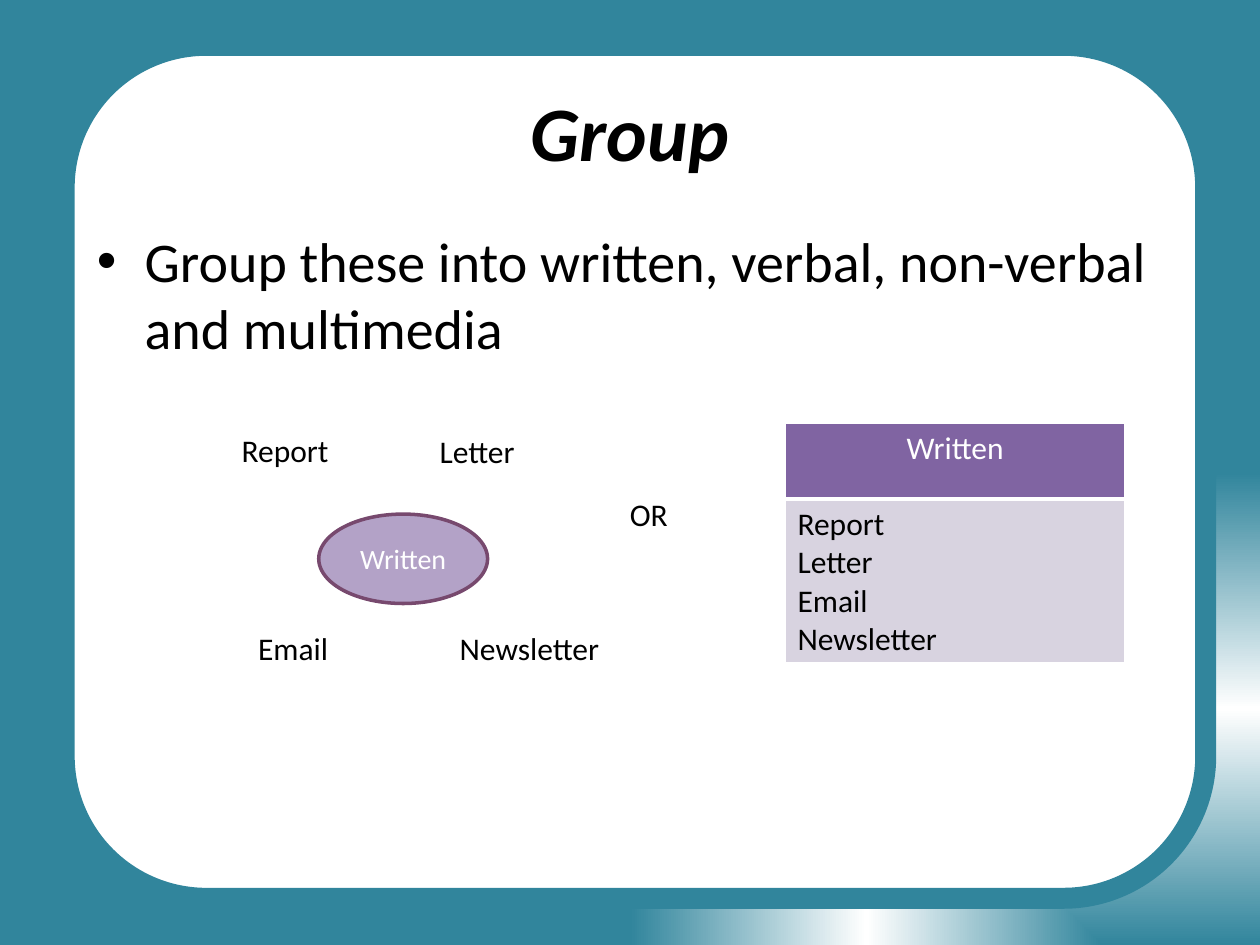
from lxml import etree
from pptx import Presentation
from pptx.dml.color import RGBColor
from pptx.enum.shapes import MSO_SHAPE as Shape
from pptx.enum.text import MSO_ANCHOR as Anchor, MSO_AUTO_SIZE as AutoSize, PP_ALIGN as Align
from pptx.oxml import parse_xml
from pptx.oxml.ns import nsdecls, qn
from pptx.util import Inches, Pt

COLORS = {
    "teal": "31859C", "white": "FFFFFF", "black": "000000", "lilac": "B3A2C7",
    "plum": "77496E", "purple": "8064A2", "pale": "D8D3E0",
}
FONT = "Calibri"
ITEMS = ["Report", "Letter", "Email", "Newsletter"]
ITEM_BOXES = [(1.82, 3.37, 0.96), (3.39, 3.38, 0.85), (1.95, 4.94, 0.83), (3.55, 4.94, 1.39)]


def rgb(name):
    """Return the named palette colour."""
    return RGBColor.from_string(COLORS[name])


def style_text(text_frame, size, color="black", align=Align.LEFT, bold=False, italic=False):
    """Format every paragraph and run of a text frame."""
    for paragraph in text_frame.paragraphs:
        paragraph.alignment = align
        for run in paragraph.runs:
            font = run.font
            font.name, font.size = FONT, Pt(size)
            font.bold, font.italic = bold, italic
            font.color.rgb = rgb(color)


def set_background(slide):
    """Fill the background with a gradient that starts at the lower right corner."""
    stops = [(0, "teal"), (50, "white"), (100, "teal")]
    slide.background.fill.solid()
    properties = slide.element.find(".//" + qn("p:bgPr"))
    stop_xml = "".join(
        f'<a:gs pos="{position * 1000}"><a:srgbClr val="{COLORS[color]}"/></a:gs>'
        for position, color in stops)
    gradient = parse_xml(
        f'<a:gradFill {nsdecls("a")} rotWithShape="1"><a:gsLst>{stop_xml}</a:gsLst>'
        '<a:path path="rect"><a:fillToRect l="100000" t="100000"/></a:path></a:gradFill>')
    properties.replace(properties[0], gradient)


def add_shape(slide, preset, box, fill, line, width):
    """Add a filled and outlined preset shape."""
    shape = slide.shapes.add_shape(preset, *map(Inches, box))
    shape.shadow.inherit = False
    shape.fill.solid()
    shape.fill.fore_color.rgb = rgb(fill)
    shape.line.color.rgb = rgb(line)
    shape.line.width = Pt(width)
    return shape


def add_text(slide, text, box, size, wrap=True, **style):
    """Add a text box and return its text frame."""
    text_frame = slide.shapes.add_textbox(*map(Inches, box)).text_frame
    text_frame.text = text
    text_frame.word_wrap = wrap
    text_frame.auto_size = AutoSize.NONE if wrap else AutoSize.SHAPE_TO_FIT_TEXT
    style_text(text_frame, size, **style)
    return text_frame


def add_bullet(paragraph, indent):
    """Give a paragraph a hanging round bullet."""
    properties = paragraph._p.get_or_add_pPr()
    properties.set("marL", str(Inches(indent)))
    properties.set("indent", str(Inches(-indent)))
    etree.SubElement(properties, qn("a:buFont"), typeface="Arial")
    etree.SubElement(properties, qn("a:buChar"), char="•")


def set_borders(cell, bottom):
    """Draw white cell borders, with a chosen width at the bottom."""
    properties = cell._tc.get_or_add_tcPr()
    for side, width in (("L", 1), ("R", 1), ("T", 1), ("B", bottom)):
        line = etree.SubElement(properties, qn(f"a:ln{side}"), w=str(Pt(width)))
        fill = etree.SubElement(line, qn("a:solidFill"))
        etree.SubElement(fill, qn("a:srgbClr"), val=COLORS["white"])


def add_table(slide):
    """Add the one-column table of written forms."""
    table = slide.shapes.add_table(
        2, 1, Inches(6.23), Inches(3.36), Inches(2.7), Inches(1.9)).table
    rows = [
        (0.6, "Written", "purple", "white", Align.CENTER, 3),
        (1.3, "\n".join(ITEMS), "pale", "black", Align.LEFT, 1),
    ]
    for index, (height, text, fill, color, align, bottom) in enumerate(rows):
        table.rows[index].height = Inches(height)
        cell = table.cell(index, 0)
        cell.text_frame.text = text
        set_borders(cell, bottom)
        cell.fill.solid()
        cell.fill.fore_color.rgb = rgb(fill)
        style_text(cell.text_frame, 18, color, align)


def main():
    """Build the slide and save it."""
    presentation = Presentation()
    presentation.slide_width, presentation.slide_height = Inches(10), Inches(7.5)
    slide = presentation.slides.add_slide(presentation.slide_layouts[6])
    set_background(slide)
    add_shape(slide, Shape.ROUNDED_RECTANGLE, (0.51, 0.36, 9.06, 6.77), "white", "teal", 12)

    title = add_text(slide, "Group", (0.5, 0.52, 9, 1.03), 44,
                     align=Align.CENTER, bold=True, italic=True)
    title.vertical_anchor = Anchor.MIDDLE
    body = add_text(slide, "Group these into written, verbal, non-verbal and multimedia",
                    (0.67, 1.75, 8.74, 4.95), 32)
    add_bullet(body.paragraphs[0], 0.38)

    ellipse = add_shape(slide, Shape.OVAL, (2.53, 4.08, 1.34, 0.71), "lilac", "plum", 2)
    ellipse.text_frame.text = "Written"
    ellipse.text_frame.vertical_anchor = Anchor.MIDDLE
    style_text(ellipse.text_frame, 16, "white", Align.CENTER)

    labels = list(zip(ITEMS, ITEM_BOXES)) + [("OR", (4.9, 3.88, 0.58))]
    for text, box in labels:
        add_text(slide, text, (*box, 0.4), 18, wrap=False)
    add_table(slide)
    presentation.save("out.pptx")


if __name__ == "__main__":
    main()
